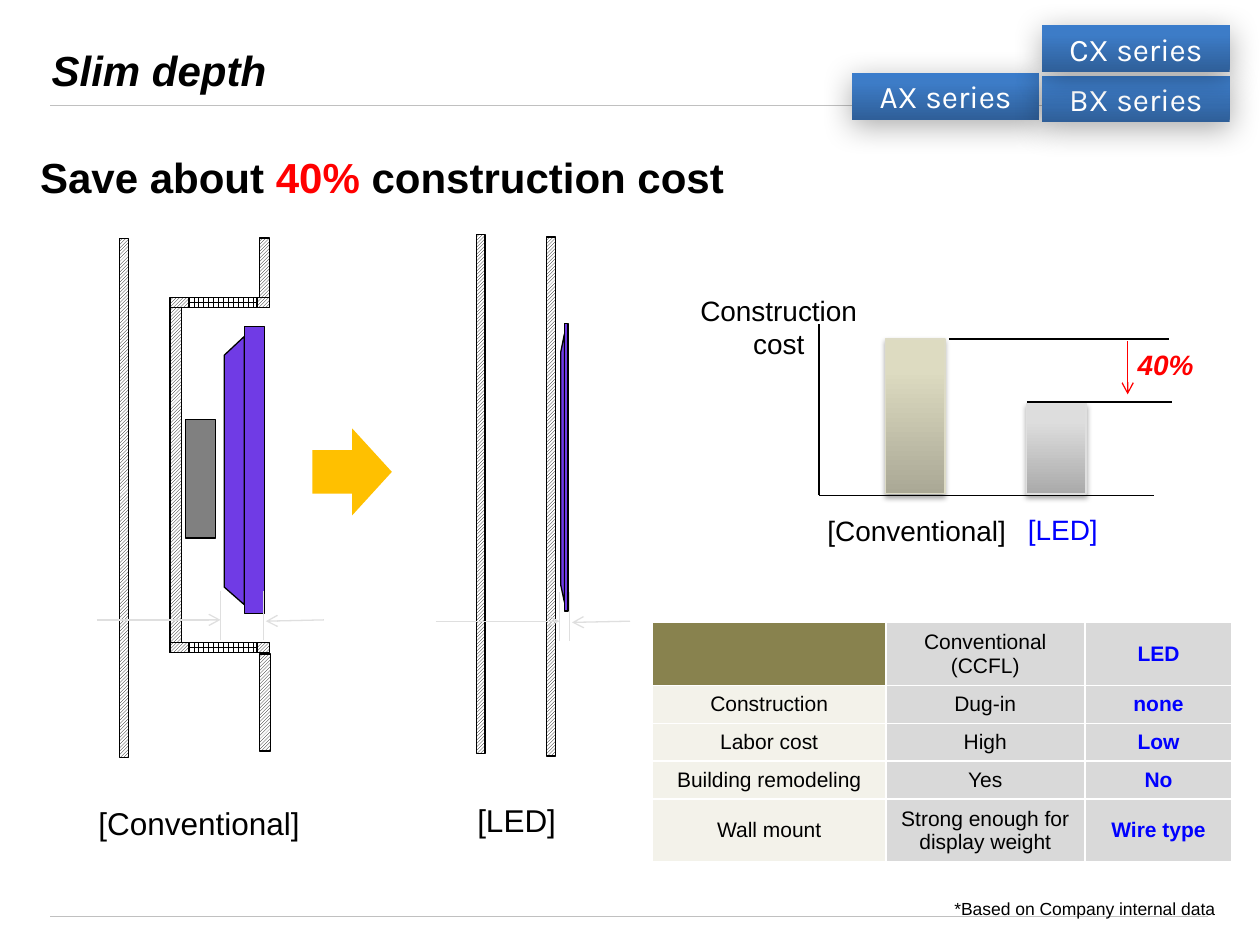
from lxml.etree import SubElement
from pptx import Presentation
from pptx.dml.color import RGBColor
from pptx.enum.dml import MSO_PATTERN
from pptx.enum.shapes import MSO_CONNECTOR, MSO_SHAPE
from pptx.enum.text import MSO_ANCHOR, PP_ALIGN
from pptx.oxml.ns import qn
from pptx.util import Inches, Pt

COLORS = {
    "black": "000000", "white": "FFFFFF", "red": "FF0000", "blue": "0000FF",
    "rule": "C0C0C0", "mark": "DFDFDF", "arrow": "FFC000", "panel": "703BE5",
    "bracket": "808080", "corner": "88824E", "label": "F3F2EA", "cell": "D9D9D9",
    "bar_edge": "DDDBC6",
}
GRADIENTS = {
    "badge": ("2F5F99", "3D7CC7", "3A7CCB"),
    "beige": ("AAA895", "DDDBC1", "DFDCC2"),
    "grey": ("AAAAAA", "DDDDDD", "DEDEDE"),
}
HATCH = MSO_PATTERN.LIGHT_UPWARD_DIAGONAL
GRID = MSO_PATTERN.LARGE_GRID


def rgb(name):
    """Return the named colour."""
    return RGBColor.from_string(COLORS[name])


def write(tf, text, size=16, color="black", bold=False, italic=False, font="Arial",
          align=PP_ALIGN.CENTER, anchor=MSO_ANCHOR.TOP, spacing=None,
          accent="", accent_color="red", wrap=True):
    """Fill a text frame, one paragraph a line, colouring the accent words."""
    tf.word_wrap, tf.vertical_anchor = wrap, anchor
    for i, line in enumerate(text.split("\n")):
        p = tf.add_paragraph() if i else tf.paragraphs[0]
        p.alignment, p.line_spacing = align, spacing
        parts = line.partition(accent) if accent else (line,)
        for part in parts:
            r = p.add_run()
            r.text = part
            r.font.name, r.font.size = font, Pt(size)
            r.font.bold, r.font.italic = bold, italic
            r.font.color.rgb = rgb(accent_color if part == accent else color)


def add_text(s, x, y, w, h, text, **fmt):
    """Add a text box."""
    write(s.shapes.add_textbox(*map(Inches, (x, y, w, h))).text_frame, text, **fmt)


def style(sp, fill, line="black"):
    """Give a shape a plain, patterned or gradient fill and its outline."""
    sp.shadow.inherit = False
    if fill in GRADIENTS:
        sp.fill.gradient()
        sp.fill.gradient_angle = 90
        stops = sp._element.spPr.find(qn("a:gradFill")).find(qn("a:gsLst"))
        stops.clear()
        for pos, color in zip((0, 80000, 100000), GRADIENTS[fill]):
            gs = SubElement(stops, qn("a:gs"), pos=str(pos))
            SubElement(gs, qn("a:srgbClr"), val=color)
    elif fill in COLORS:
        sp.fill.solid()
        sp.fill.fore_color.rgb = rgb(fill)
    else:
        sp.fill.patterned()
        sp.fill.pattern = fill
        sp.fill.fore_color.rgb, sp.fill.back_color.rgb = rgb("black"), rgb("white")
    if line:
        sp.line.color.rgb, sp.line.width = rgb(line), Pt(0.75)
    else:
        sp.line.fill.background()


def add_rect(s, x, y, w, h, fill, line="black", kind=MSO_SHAPE.RECTANGLE):
    """Add a filled preset shape."""
    sp = s.shapes.add_shape(kind, *map(Inches, (x, y, w, h)))
    style(sp, fill, line)
    return sp


def add_shadow(sp, alpha, blur, dist, angle):
    """Give a shape a soft black outer shadow."""
    effects = sp._element.spPr.find(qn("a:effectLst"))
    shadow = SubElement(effects, qn("a:outerShdw"), blurRad=str(Pt(blur)),
                        dist=str(Pt(dist)), dir=str(angle * 60000), rotWithShape="0")
    color = SubElement(shadow, qn("a:srgbClr"), val=COLORS["black"])
    SubElement(color, qn("a:alpha"), val=str(alpha * 1000))


def add_line(s, x1, y1, x2, y2, color="black", width=0.75, arrow=False):
    """Add a straight line, with an open arrowhead at its end if asked."""
    c = s.shapes.add_connector(MSO_CONNECTOR.STRAIGHT, *map(Inches, (x1, y1, x2, y2)))
    c.line.color.rgb, c.line.width = rgb(color), Pt(width)
    if arrow:
        SubElement(c.line._get_or_add_ln(), qn("a:tailEnd"), type="arrow")
    SubElement(c._element.spPr, qn("a:effectLst"))


def add_frame(s, x, w):
    """Place the title, the heading, the two rules and the footnote."""
    for y in (0.84, 7.27):
        add_line(s, x, y, x + w, y, "rule", 0.5)
    t = s.shapes.title
    t.left, t.top, t.width, t.height = map(Inches, (x - 0.09, 0.3, 9, 1.25))
    write(t.text_frame, "Slim depth", size=24, bold=True, italic=True, align=PP_ALIGN.LEFT)
    add_text(s, x - 0.18, 0.95, 9.48, 0.63, "Save about 40% construction cost", size=24,
             bold=True, align=PP_ALIGN.LEFT, spacing=1.5, accent="40%")
    add_text(s, 5.92, 7.08, 3.82, 0.27, "*Based on Company internal data",
             size=10, align=PP_ALIGN.RIGHT)


def add_display(s, x, y, depth):
    """Draw a display from the side: tapered back and flat front, equally deep."""
    points = [(x + dx, y + dy) for dx, dy in
              ((depth, 0.08), (0, 0.23), (0, 2.07), (depth, 2.21))]
    fb = s.shapes.build_freeform(*map(Inches, points[0]))
    fb.add_line_segments([tuple(map(Inches, pt)) for pt in points[1:]])
    style(fb.convert_to_shape(), "panel")
    add_rect(s, x + depth, y, depth, 2.28, "panel")


def add_depth_marks(s, x, y, gap):
    """Mark a depth with two guides and two arrows that point at them."""
    add_line(s, x - 0.98, y, x, y, "mark", arrow=True)
    add_line(s, x + gap + 0.48, y, x + gap + 0.02, y + 0.01, "mark", arrow=True)
    for guide in (x, x + gap):
        add_line(s, guide, y - 0.23, guide, y + 0.16, "mark")


def add_conventional(s, x, y):
    """Draw the display set in a recess dug into the wall."""
    add_rect(s, x + 0.4, y + 0.55, 0.09, 2.74, HATCH)
    for ledge in (y + 0.47, y + 3.21):
        add_rect(s, x + 0.4, ledge, 0.79, 0.08, HATCH)
        add_rect(s, x + 0.55, ledge, 0.54, 0.08, GRID)
    add_rect(s, x, y, 0.07, 4.12, HATCH)
    add_rect(s, x + 1.11, y, 0.08, 0.47, HATCH)
    add_rect(s, x + 1.11, y + 3.3, 0.09, 0.77, HATCH)
    add_display(s, x + 0.83, y + 0.7, 0.16)
    add_rect(s, x + 0.52, y + 1.44, 0.24, 0.94, "bracket")
    add_depth_marks(s, x + 0.8, y + 3.03, 0.34)
    add_text(s, x - 0.78, y + 4.44, 2.82, 0.4, "[Conventional]", size=18)


def add_led(s, x, y):
    """Draw the slim display hung on the face of the wall."""
    add_rect(s, x, y, 0.07, 4.12, HATCH)
    add_rect(s, x + 0.56, y + 0.02, 0.07, 4.12, HATCH)
    add_display(s, x + 0.67, y + 0.71, 0.03)
    add_depth_marks(s, x + 0.66, y + 3.07, 0.08)
    add_text(s, x - 1.09, y + 4.45, 2.82, 0.4, "[LED]", size=18)


def add_cost_bars(s, x, y):
    """Draw the cost diagram with its axes meeting at x, y."""
    bars = ((0.53, 1.23, "beige", "bar_edge"), (1.65, 0.72, "grey", "mark"))
    for dx, h, fill, line in bars:
        add_shadow(add_rect(s, x + dx, y - h - 0.01, 0.47, h, fill, line), 35, 3.1, 1.8, 90)
    add_line(s, x, y, x, y - 1.36)
    add_line(s, x, y, x + 2.66, y)
    add_line(s, x + 1.03, y - 1.24, x + 2.78, y - 1.24)
    add_line(s, x + 1.65, y - 0.74, x + 2.8, y - 0.74)
    add_line(s, x + 2.45, y - 1.22, x + 2.45, y - 0.8, "red", arrow=True)
    add_text(s, x + 2.42, y - 1.22, 0.65, 0.37, "40%", color="red", bold=True,
             italic=True, align=PP_ALIGN.RIGHT, wrap=False)
    add_text(s, x - 1.31, y - 1.65, 1.98, 0.64, "Construction\ncost")
    add_text(s, x - 0.18, y + 0.1, 1.91, 0.37, "[Conventional]")
    add_text(s, x + 1.34, y + 0.09, 1.19, 0.37, "[LED]", color="blue")


def add_comparison(s, x, y, widths, heights):
    """Place the table that compares the two ways of mounting."""
    rows = (("", "Conventional (CCFL)", "LED"), ("Construction", "Dug-in", "none"),
            ("Labor cost", "High", "Low"), ("Building remodeling", "Yes", "No"),
            ("Wall mount", "Strong enough for display weight", "Wire type"))
    box = map(Inches, (x, y, sum(widths), sum(heights)))
    table = s.shapes.add_table(len(rows), len(widths), *box).table
    table.first_row = table.horz_banding = False
    for col, w in zip(table.columns, widths):
        col.width = Inches(w)
    for i, (row, h) in enumerate(zip(rows, heights)):
        table.rows[i].height = Inches(h)
        for j, text in enumerate(row):
            cell = table.cell(i, j)
            tcPr = cell._tc.get_or_add_tcPr()
            for side in ("a:lnL", "a:lnR", "a:lnT", "a:lnB"):
                ln = SubElement(tcPr, qn(side), w=str(Pt(1)))
                SubElement(SubElement(ln, qn("a:solidFill")), qn("a:srgbClr"), val=COLORS["white"])
            cell.fill.solid()
            cell.fill.fore_color.rgb = rgb("cell" if j else "label" if i else "corner")
            cell.margin_left = cell.margin_right = Inches(0.04)
            cell.vertical_anchor = MSO_ANCHOR.MIDDLE
            if text:
                write(cell.text_frame, text, size=12, bold=j == 2, anchor=MSO_ANCHOR.MIDDLE,
                      color="blue" if j == 2 else "black")


def add_badges(s, x, y):
    """Place the three series badges."""
    for dx, dy, name in ((0, 0.38, "AX"), (1.51, 0.4, "BX"), (1.51, 0, "CX")):
        sp = add_rect(s, x + dx, y + dy, 1.49, 0.37, "badge", None)
        add_shadow(sp, 33, 17.8, 4, 87)
        write(sp.text_frame, f"{name} series", size=18, color="white", font="Karla",
              anchor=MSO_ANCHOR.MIDDLE)


def main():
    """Build the slide and save it."""
    prs = Presentation()
    prs.slide_width, prs.slide_height = Inches(10), Inches(7.5)
    s = prs.slides.add_slide(prs.slide_layouts[5])
    add_frame(s, 0.4, 9.19)
    add_rect(s, 2.45, 3.43, 0.69, 0.63, "arrow", None, MSO_SHAPE.UP_ARROW).rotation = 90
    add_conventional(s, 0.95, 1.89)
    add_led(s, 3.78, 1.86)
    add_comparison(s, 5.18, 4.94, (1.85, 1.58, 1.17), (0.5, 0.3, 0.3, 0.3, 0.5))
    add_cost_bars(s, 6.5, 3.93)
    add_badges(s, 6.76, 0.2)
    prs.save("out.pptx")


if __name__ == "__main__":
    main()
